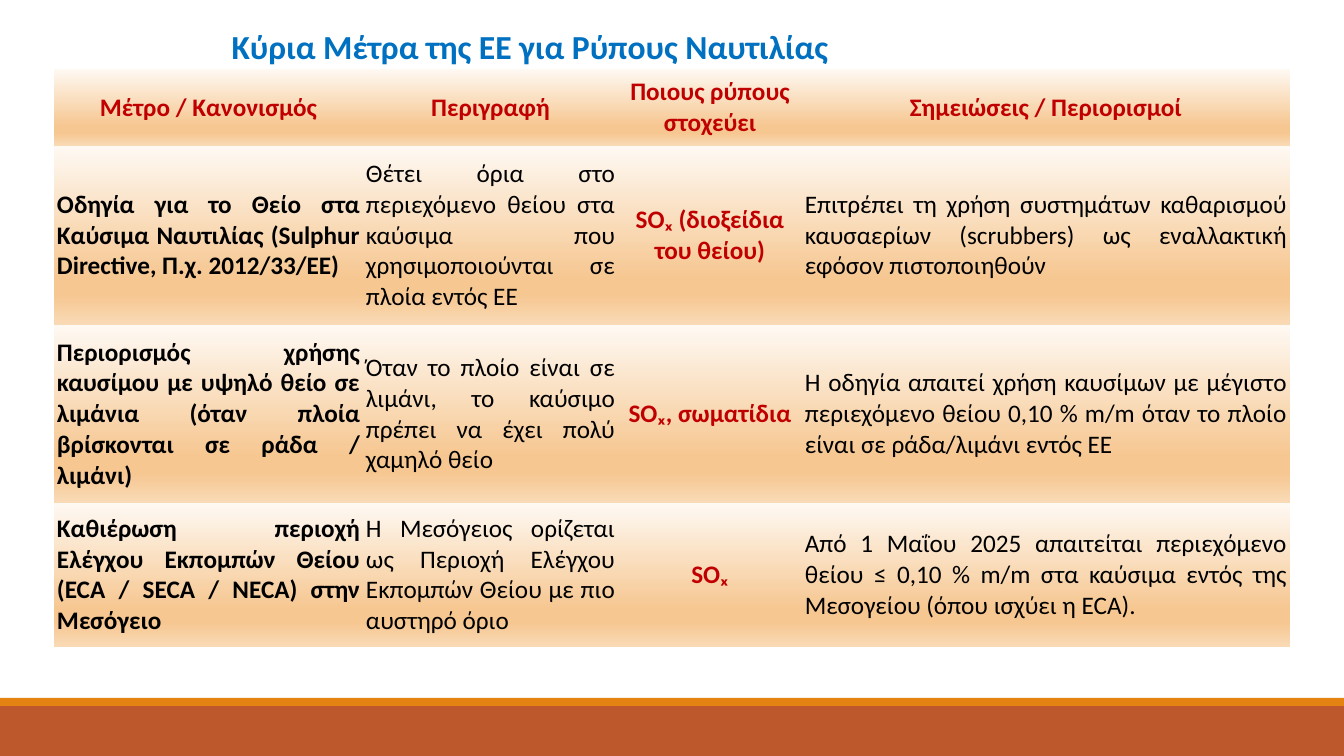
import pptx
import pptx.dml.color
import pptx.enum.shapes
import pptx.enum.text
import pptx.oxml
import pptx.oxml.ns
import pptx.util

RGB = pptx.dml.color.RGBColor
ALIGN = pptx.enum.text.PP_ALIGN
ANCHOR = pptx.enum.text.MSO_ANCHOR

BLUE = RGB(0x00, 0x70, 0xC0)
RED = RGB(0xC0, 0x00, 0x00)
BLACK = RGB(0x00, 0x00, 0x00)
RUST = RGB(0xBD, 0x58, 0x2C)
ORANGE = RGB(0xE4, 0x83, 0x12)
CREAM = RGB(0xFE, 0xF9, 0xF3)
PEACH = RGB(0xF6, 0xC7, 0x91)
SAND = RGB(0xF9, 0xDA, 0xB6)

STOPS = [(0, CREAM), (74, PEACH), (83, PEACH), (100, SAND)]
PLAIN = "{2D5ABB26-0587-4C30-8999-92F81FD0307C}"  # no style, no grid
COLS = [309, 255, 184, 488]
ROWS = [77, 179, 178, 144]
HEADS = ["Μέτρο / Κανονισμός", "Περιγραφή", "Ποιους ρύπους στοχεύει",
         "Σημειώσεις / Περιορισμοί"]
RULES = [
    ["Οδηγία για το Θείο στα Καύσιμα Ναυτιλίας (Sulphur Directive, Π.χ. 2012/33/ΕΕ)",
     "Θέτει όρια στο περιεχόμενο θείου στα καύσιμα που χρησιμοποιούνται σε πλοία εντός ΕΕ",
     "SOₓ (διοξείδια του θείου)",
     "Επιτρέπει τη χρήση συστημάτων καθαρισμού καυσαερίων (scrubbers) ως εναλλακτική "
     "εφόσον πιστοποιηθούν"],
    ["Περιορισμός χρήσης καυσίμου με υψηλό θείο σε λιμάνια (όταν πλοία βρίσκονται "
     "σε ράδα / λιμάνι)",
     "Όταν το πλοίο είναι σε λιμάνι, το καύσιμο πρέπει να έχει πολύ χαμηλό θείο",
     "SOₓ, σωματίδια",
     "Η οδηγία απαιτεί χρήση καυσίμων με μέγιστο περιεχόμενο θείου 0,10 % m/m όταν "
     "το πλοίο είναι σε ράδα/λιμάνι εντός ΕΕ"],
    ["Καθιέρωση περιοχή Ελέγχου Εκπομπών Θείου (ECA / SECA / NECA) στην Μεσόγειο",
     "Η Μεσόγειος ορίζεται ως Περιοχή Ελέγχου Εκπομπών Θείου με πιο αυστηρό όριο",
     "SOₓ",
     "Από 1 Μαΐου 2025 απαιτείται περιεχόμενο θείου ≤ 0,10 % m/m στα καύσιμα εντός "
     "της Μεσογείου (όπου ισχύει η ECA)."],
]
HEAD = dict(color=RED, bold=True, align=ALIGN.CENTER)
BODY = [dict(bold=True), dict(), HEAD, dict()]


def px(n):
    return pptx.util.Emu(round(n * 914400 / 100.8))


def write(frame, text, size=18, color=BLACK, bold=False, align=ALIGN.JUSTIFY,
          font="Calibri"):
    para = frame.paragraphs[0]
    para.alignment = align
    run = para.add_run()
    run.text = text
    run.font.name = font
    run.font.size = pptx.util.Pt(size)
    run.font.bold = bold
    run.font.color.rgb = color


def blend():
    """Return the downward gradient fill of a cell."""
    stops = "".join(f'<a:gs pos="{pos * 1000}"><a:srgbClr val="{color}"/></a:gs>'
                    for pos, color in STOPS)
    return pptx.oxml.parse_xml(
        f'<a:gradFill {pptx.oxml.ns.nsdecls("a")}><a:gsLst>{stops}</a:gsLst>'
        '<a:lin ang="5400000" scaled="0"/></a:gradFill>')


class Page:
    def __init__(self, deck):
        self.slide = deck.slides.add_slide(deck.slide_layouts[5])

    def bar(self, top, high, color):
        bar = self.slide.shapes.add_shape(
            pptx.enum.shapes.MSO_SHAPE.RECTANGLE, 0, px(top), px(1344), px(high))
        bar.shadow.inherit = False
        bar.fill.solid()
        bar.fill.fore_color.rgb = color
        bar.line.fill.background()

    def title(self, text, left, top, wide, high):
        title = self.slide.shapes.title
        title.left, title.top = px(left), px(top)
        title.width, title.height = px(wide), px(high)
        frame = title.text_frame
        frame.word_wrap = True
        frame.auto_size = pptx.enum.text.MSO_AUTO_SIZE.NONE
        frame.vertical_anchor = ANCHOR.TOP
        write(frame, text, size=24, color=BLUE, bold=True, align=ALIGN.CENTER)

    def cell(self, cell, text, style):
        cell.margin_left = cell.margin_right = px(3)
        cell.margin_top = cell.margin_bottom = px(2)
        cell.vertical_anchor = ANCHOR.MIDDLE
        cell._tc.get_or_add_tcPr().append(blend())
        write(cell.text_frame, text, **style)

    def table(self, left, top):
        table = self.slide.shapes.add_table(
            len(ROWS), len(COLS), px(left), px(top), px(sum(COLS)), px(sum(ROWS))).table
        table.first_row = table.horz_banding = False
        table._tbl.tblPr.find(pptx.oxml.ns.qn("a:tableStyleId")).text = PLAIN
        for col, wide in zip(table.columns, COLS):
            col.width = px(wide)
        for row, high in zip(table.rows, ROWS):
            row.height = px(high)
        for r, texts in enumerate([HEADS] + RULES):
            for c, text in enumerate(texts):
                self.cell(table.cell(r, c), text, BODY[c] if r else HEAD)


def main():
    deck = pptx.Presentation()
    deck.slide_width, deck.slide_height = px(1344), px(756)
    page = Page(deck)
    page.bar(706, 50, RUST)
    page.bar(698, 8, ORANGE)
    page.title("Κύρια Μέτρα της ΕΕ για Ρύπους Ναυτιλίας", 53, 21, 954, 82)
    page.table(54, 69)
    deck.save("out.pptx")


if __name__ == "__main__":
    main()
